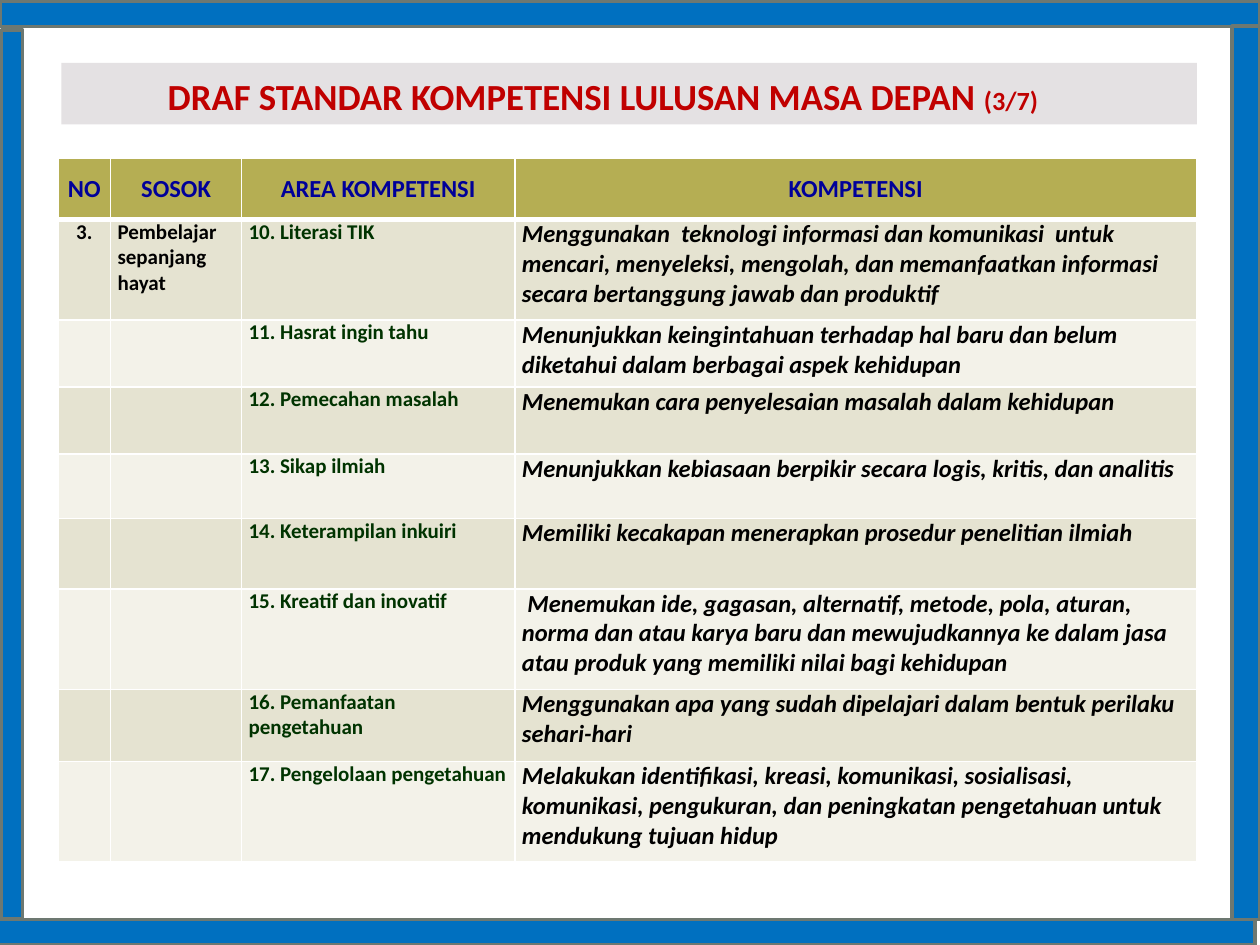
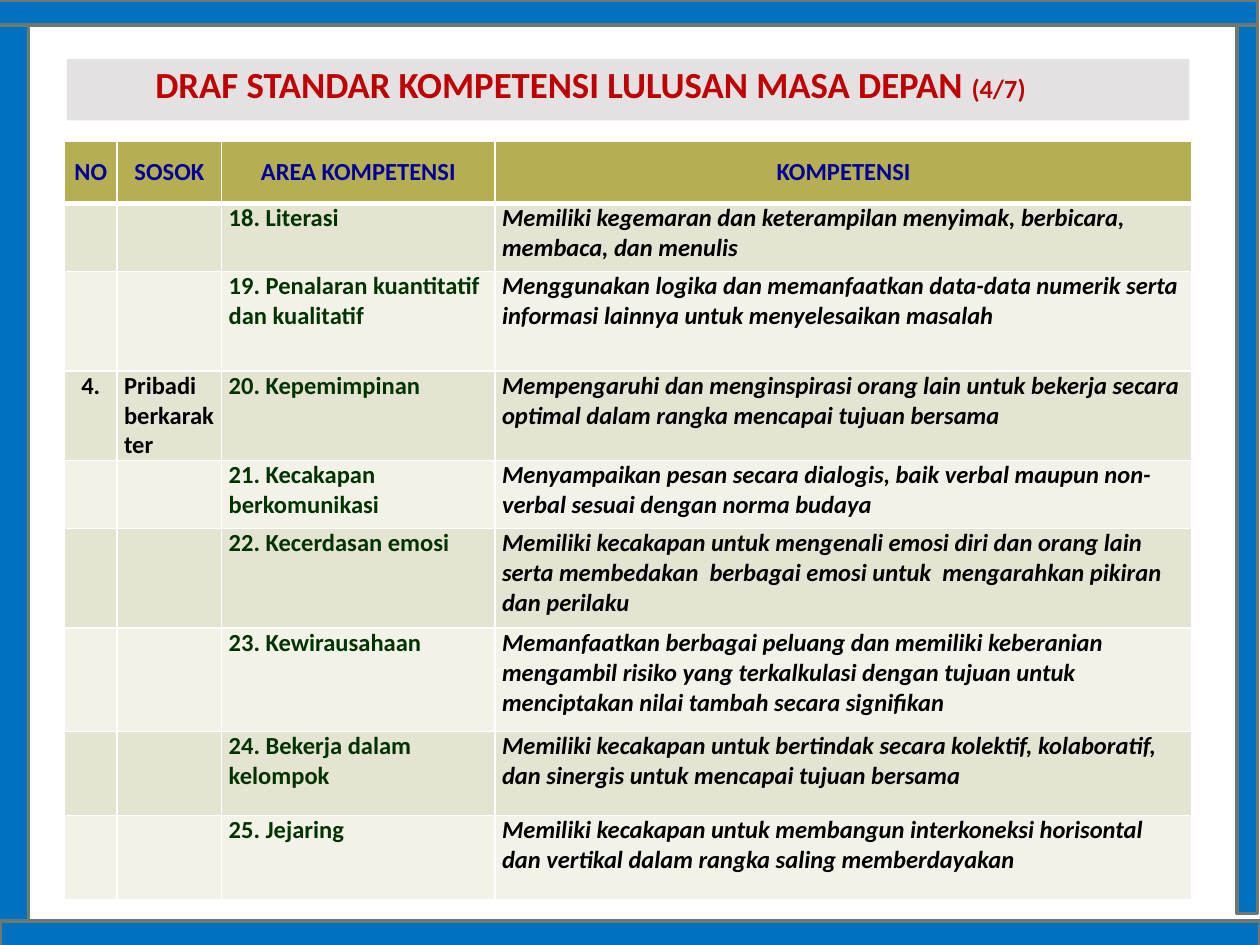
"""Build two table slides on the graduate competency standards."""
import pptx
import pptx.util
import pptx.dml.color
import pptx.enum.shapes
import pptx.enum.text
import pptx.oxml
import pptx.oxml.ns

Cm = pptx.util.Cm
Pt = pptx.util.Pt
Align = pptx.enum.text.PP_ALIGN
Anchor = pptx.enum.text.MSO_ANCHOR

FONT = "Calibri"
COLOURS = {
    "title": "C00000", "band": "E4E1E3", "frame": "0070C0", "frame_line": "6D7871",
    "header": "B5AE53", "header_text": "000099", "odd_row": "E5E3D1",
    "even_row": "F3F2E9", "area": "003300", "text": "000000", "border": "FFFFFF",
}
TITLE = "DRAF STANDAR KOMPETENSI LULUSAN MASA DEPAN "
HEADINGS = ["NO", "SOSOK", "AREA KOMPETENSI", "KOMPETENSI"]
CELL_INSET = 0.14

PAGES = [
    {
        "number": "(3/7)", "label_size": 12,
        "band": (1.24, 1.27, 22.89, 1.24), "title": (2.92, 1.32, 18.47, 1.22),
        "frame": [(0, 0.03, 25.4, 0.51), (-0.1, 18.54, 25.4, 0.51),
                  (0.03, 0.61, 0.43, 17.91), (24.84, 0.53, 0.56, 18.01)],
        "table": (1.17, 3.2), "columns": [1.06, 2.64, 5.51, 13.74],
        "heights": [1.22, 2.03, 1.35, 1.35, 1.3, 1.42, 2.03, 1.45, 2.03],
        "rows": [
            ("3.", "Pembelajar sepanjang hayat", "10. Literasi TIK",
             "Menggunakan  teknologi informasi dan komunikasi  untuk mencari, menyeleksi, "
             "mengolah, dan memanfaatkan informasi secara bertanggung jawab dan produktif"),
            ("", "", "11. Hasrat ingin tahu",
             "Menunjukkan keingintahuan terhadap hal baru dan belum diketahui dalam "
             "berbagai aspek kehidupan"),
            ("", "", "12. Pemecahan masalah",
             "Menemukan cara penyelesaian masalah dalam kehidupan"),
            ("", "", "13. Sikap ilmiah",
             "Menunjukkan kebiasaan berpikir secara logis, kritis, dan analitis"),
            ("", "", "14. Keterampilan inkuiri",
             "Memiliki kecakapan menerapkan prosedur penelitian ilmiah"),
            ("", "", "15. Kreatif dan inovatif",
             " Menemukan ide, gagasan, alternatif, metode, pola, aturan, norma dan atau "
             "karya baru dan mewujudkannya ke dalam jasa atau produk yang memiliki nilai "
             "bagi kehidupan"),
            ("", "", "16. Pemanfaatan pengetahuan",
             "Menggunakan apa yang sudah dipelajari dalam bentuk perilaku sehari-hari"),
            ("", "", "17. Pengelolaan pengetahuan",
             "Melakukan identifikasi, kreasi, komunikasi, sosialisasi, komunikasi, "
             "pengukuran, dan peningkatan pengetahuan untuk mendukung tujuan hidup"),
        ],
    },
    {
        "number": "(4/7)", "label_size": 14,
        "band": (1.35, 1.19, 22.63, 1.24), "title": (2.67, 1.07, 18.47, 1.22),
        "frame": [(-0.05, 0, 25.4, 0.51), (0, 18.57, 25.4, 0.51),
                  (-0.03, 0.51, 0.61, 18.06), (24.94, 0.51, 0.41, 17.91)],
        "table": (1.3, 2.84), "columns": [1.06, 2.11, 5.51, 14.05],
        "heights": [1.26, 1.37, 2.01, 1.37, 1.37, 2.01, 2.08, 1.7, 1.7],
        "rows": [
            ("", "", "18. Literasi",
             "Memiliki kegemaran dan keterampilan menyimak, berbicara, membaca, dan menulis"),
            ("", "", "19. Penalaran kuantitatif dan kualitatif",
             "Menggunakan logika dan memanfaatkan data-data numerik serta informasi lainnya "
             "untuk menyelesaikan masalah"),
            ("4.", "Pribadi berkarakter", "20. Kepemimpinan",
             "Mempengaruhi dan menginspirasi orang lain untuk bekerja secara optimal dalam "
             "rangka mencapai tujuan bersama"),
            ("", "", "21. Kecakapan berkomunikasi",
             "Menyampaikan pesan secara dialogis, baik verbal maupun non-verbal sesuai "
             "dengan norma budaya"),
            ("", "", "22. Kecerdasan emosi",
             "Memiliki kecakapan untuk mengenali emosi diri dan orang lain serta membedakan"
             "  berbagai emosi untuk  mengarahkan pikiran dan perilaku"),
            ("", "", "23. Kewirausahaan",
             "Memanfaatkan berbagai peluang dan memiliki keberanian mengambil risiko yang "
             "terkalkulasi dengan tujuan untuk menciptakan nilai tambah secara signifikan"),
            ("", "", "24. Bekerja dalam kelompok",
             "Memiliki kecakapan untuk bertindak secara kolektif, kolaboratif, dan sinergis "
             "untuk mencapai tujuan bersama"),
            ("", "", "25. Jejaring",
             "Memiliki kecakapan untuk membangun interkoneksi horisontal dan vertikal dalam "
             "rangka saling memberdayakan"),
        ],
    },
]


def colour(name):
    """Return the named colour."""
    return pptx.dml.color.RGBColor.from_string(COLOURS[name])


def add_span(para, text, size, colour_name, italic=False):
    """Add one bold run to a paragraph."""
    span = para.add_run()
    span.text = text
    span.font.name = FONT
    span.font.size = Pt(size)
    span.font.bold = True
    span.font.italic = italic
    span.font.color.rgb = colour(colour_name)


def add_bar(page, box, fill, line=None):
    """Draw a filled rectangle, outlined if a line colour is given."""
    bar = page.shapes.add_shape(pptx.enum.shapes.MSO_SHAPE.RECTANGLE, *map(Cm, box))
    bar.shadow.inherit = False
    bar.fill.solid()
    bar.fill.fore_color.rgb = colour(fill)
    if line:
        bar.line.color.rgb = colour(line)
        bar.line.width = Pt(2)
    else:
        bar.line.fill.background()
    return bar


def add_title(page, band_box, title_box, number):
    """Set the title placeholder on top of its grey band."""
    band = add_bar(page, band_box, "band")
    title = page.shapes.title
    band.element.addnext(title.element)
    title.left, title.top, title.width, title.height = map(Cm, title_box)
    frame = title.text_frame
    frame.word_wrap = True
    frame.auto_size = pptx.enum.text.MSO_AUTO_SIZE.NONE
    frame.vertical_anchor = Anchor.MIDDLE
    para = frame.paragraphs[0]
    para.alignment = Align.CENTER
    add_span(para, TITLE, 21, "title")
    add_span(para, number, 15, "title")


def set_borders(cell, bottom):
    """Give a cell white borders, with its own bottom width in points."""
    properties = cell._tc.get_or_add_tcPr()
    for side, width in (("L", 1), ("R", 1), ("T", 1), ("B", bottom)):
        properties.append(pptx.oxml.parse_xml(
            f'<a:ln{side} {pptx.oxml.ns.nsdecls("a")} w="{Pt(width)}"><a:solidFill>'
            f'<a:srgbClr val="{COLOURS["border"]}"/></a:solidFill></a:ln{side}>'))


def fill_cell(cell, text, row, column, label_size):
    """Format a cell by its row and column and write its text."""
    header = row == 0
    set_borders(cell, 3 if header else 1)
    cell.fill.solid()
    cell.fill.fore_color.rgb = colour(
        "header" if header else "odd_row" if row % 2 else "even_row")
    if not text:
        return
    cell.margin_left = cell.margin_right = Cm(CELL_INSET)
    cell.margin_top = cell.margin_bottom = 0
    cell.vertical_anchor = Anchor.MIDDLE if header else Anchor.TOP
    para = cell.text_frame.paragraphs[0]
    para.alignment = Align.CENTER if header or column == 0 else Align.LEFT
    if header:
        add_span(para, text, 14, "header_text")
    elif column == 3:
        add_span(para, text, 14, "text", italic=True)
    else:
        add_span(para, text, label_size, "area" if column == 2 else "text")


def add_competency_table(page, corner, columns, heights, rows, label_size):
    """Build the competency table from its top left corner."""
    size = (sum(columns), sum(heights))
    table = page.shapes.add_table(
        len(heights), len(columns), *map(Cm, corner + size)).table
    for column, width in zip(table.columns, columns):
        column.width = Cm(width)
    for row, height in zip(table.rows, heights):
        row.height = Cm(height)
    for row, texts in enumerate([HEADINGS, *rows]):
        for column, text in enumerate(texts):
            fill_cell(table.cell(row, column), text, row, column, label_size)


def add_competency_page(deck, content):
    """Add one slide with its table, title and blue frame."""
    page = deck.slides.add_slide(deck.slide_layouts.get_by_name("Title Only"))
    add_competency_table(page, content["table"], content["columns"],
                         content["heights"], content["rows"], content["label_size"])
    add_title(page, content["band"], content["title"], content["number"])
    for side in content["frame"]:
        add_bar(page, side, "frame", "frame_line")


def main():
    """Build and save the deck."""
    deck = pptx.Presentation()
    deck.slide_width, deck.slide_height = Cm(25.4), Cm(19.05)
    for content in PAGES:
        add_competency_page(deck, content)
    deck.save("out.pptx")


if __name__ == "__main__":
    main()
